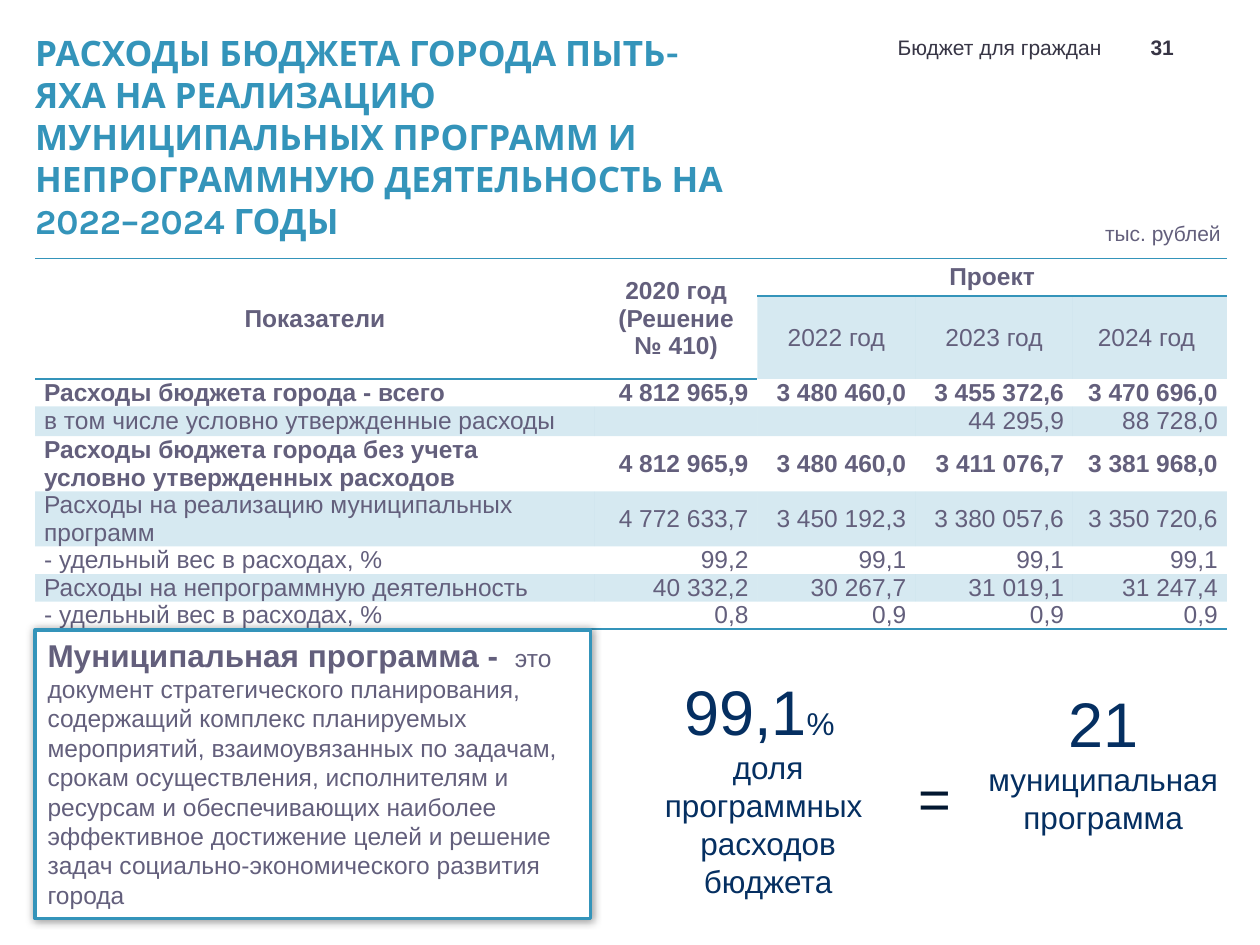
from dataclasses import dataclass
from typing import Optional

from lxml import etree
from pptx import Presentation
from pptx.dml.color import RGBColor
from pptx.enum import shapes, text
from pptx.oxml import ns
from pptx.util import Cm, Pt

TEAL = RGBColor(0x34, 0x94, 0xBA)
GREY = RGBColor(0x63, 0x5F, 0x7C)
DARK = RGBColor(0x37, 0x35, 0x45)
NAVY = RGBColor(0x05, 0x2F, 0x61)
INK = RGBColor(0x02, 0x17, 0x30)
WHITE = RGBColor(0xFF, 0xFF, 0xFF)

LEFT, CENTER, RIGHT = text.PP_ALIGN.LEFT, text.PP_ALIGN.CENTER, text.PP_ALIGN.RIGHT
TOP, MIDDLE, BOTTOM = text.MSO_ANCHOR.TOP, text.MSO_ANCHOR.MIDDLE, text.MSO_ANCHOR.BOTTOM
PLAIN_TABLE = "{2D5ABB26-0587-4C30-8999-92F81FD0307C}"


@dataclass
class Run:
    text: str
    size: float
    color: RGBColor
    bold: bool = False
    font: str = "Arial"


@dataclass
class Label:
    box: tuple  # left, top, width, height in cm
    paragraphs: list
    align: text.PP_ALIGN = CENTER
    anchor: text.MSO_ANCHOR = TOP
    grow: bool = False
    side_inset: float = 0.25


@dataclass
class Row:
    name: str
    values: tuple
    height: float = 0.53
    bold: bool = False
    tinted: bool = False


def add_xml(parent, tag: str, index: Optional[int] = None, **attrs):
    node = etree.Element(ns.qn(tag), {k: str(v) for k, v in attrs.items()})
    parent.insert(len(parent) if index is None else index, node)
    return node


def add_runs(p, runs: list, align) -> None:
    p.alignment = align
    for run in runs:
        r = p.add_run()
        r.text = run.text
        r.font.size, r.font.bold, r.font.name = Pt(run.size), run.bold, run.font
        r.font.color.rgb = run.color


def fill_frame(tf, label: Label) -> None:
    tf.word_wrap = True
    tf.vertical_anchor = label.anchor
    tf.margin_left = tf.margin_right = Cm(label.side_inset)
    tf.auto_size = (text.MSO_AUTO_SIZE.SHAPE_TO_FIT_TEXT if label.grow
                    else text.MSO_AUTO_SIZE.NONE)
    for i, runs in enumerate(label.paragraphs):
        p = tf.add_paragraph() if i else tf.paragraphs[0]
        add_runs(p, runs, label.align)


def add_label(s, label: Label) -> None:
    sp = s.shapes.add_textbox(*map(Cm, label.box))
    fill_frame(sp.text_frame, label)


def add_panel(s, label: Label) -> None:
    sp = s.shapes.add_shape(shapes.MSO_SHAPE.RECTANGLE, *map(Cm, label.box))
    sp.fill.solid()
    sp.fill.fore_color.rgb = WHITE
    sp.line.color.rgb, sp.line.width = TEAL, Pt(2)
    sp.shadow.inherit = False
    effects = sp._element.spPr.find(ns.qn("a:effectLst"))
    shadow = add_xml(effects, "a:outerShdw", blurRad=Pt(5), dist=0, dir=0, rotWithShape=0)
    add_xml(add_xml(shadow, "a:srgbClr", val="000000"), "a:alpha", val=40000)
    fill_frame(sp.text_frame, label)


def style_cell(cell, value: str = "", align=LEFT, bold: bool = False,
               tinted: bool = False, borders: tuple = ()) -> None:
    cell.vertical_anchor = MIDDLE
    cell.margin_left = cell.margin_right = Cm(0.18)
    cell.margin_top = cell.margin_bottom = 0
    p = cell.text_frame.paragraphs[0]
    if value:
        add_runs(p, [Run(value, 14, GREY, bold)], align)
    else:
        add_xml(p._p, "a:endParaRPr", sz=1400)
    if tinted:
        cell.fill.solid()
        cell.fill.fore_color.rgb = TEAL
    else:
        cell.fill.background()
    tc_pr = cell._tc.get_or_add_tcPr()
    for color in tc_pr.iter(ns.qn("a:srgbClr")):
        add_xml(color, "a:alpha", val=20000)
    for i, edge in enumerate(borders):
        line = add_xml(tc_pr, f"a:{edge}", i, w=Pt(1))
        add_xml(add_xml(line, "a:solidFill"), "a:srgbClr", val=TEAL)


def add_budget_table(s, box: tuple, widths: tuple, rows: list) -> None:
    heads = (0.76, 0.84)
    frame = s.shapes.add_table(len(rows) + 2, len(widths), *map(Cm, box))
    table = frame.table
    table.first_row = table.horz_banding = False
    table._tbl.tblPr.find(ns.qn("a:tableStyleId")).text = PLAIN_TABLE
    for column, width in zip(table.columns, widths):
        column.width = Cm(width)
    for line, height in zip(table.rows, (*heads, *(row.height for row in rows))):
        line.height = Cm(height)

    # Two-level header
    top = ("Показатели", "2020 год (Решение № 410)", "Проект", "", "")
    years = ("", "", "2022 год", "2023 год", "2024 год ")
    for c, (title, year) in enumerate(zip(top, years)):
        style_cell(table.cell(0, c), title, CENTER, True, borders=("lnT", "lnB"))
        style_cell(table.cell(1, c), year, CENTER, tinted=bool(year),
                   borders=() if year else ("lnB",))
    for c in (0, 1):
        table.cell(0, c).merge(table.cell(1, c))
    table.cell(0, 2).merge(table.cell(0, 4))

    # Figures
    for n, row in enumerate(rows, start=2):
        borders = ("lnB",) if row is rows[-1] else ()
        for c, value in enumerate((row.name, *row.values)):
            style_cell(table.cell(n, c), value, RIGHT if c else LEFT,
                       row.bold, row.tinted, borders)


ROWS = [
    Row("Расходы бюджета города - всего",
        ("4 812 965,9", "3 480 460,0", "3 455 372,6", "3 470 696,0"), bold=True),
    Row("в том числе условно утвержденные расходы",
        ("", "", "44 295,9", "88 728,0"), tinted=True),
    Row("Расходы бюджета города без учета условно утвержденных расходов",
        ("4 812 965,9", "3 480 460,0", "3 411 076,7", "3 381 968,0"), 1.07, bold=True),
    Row("Расходы на реализацию муниципальных программ",
        ("4 772 633,7", "3 450 192,3", "3 380 057,6", "3 350 720,6"), 1.07, tinted=True),
    Row("- удельный вес в расходах, %", ("99,2", "99,1", "99,1", "99,1")),
    Row("Расходы на непрограммную деятельность",
        ("40 332,2", "30 267,7", "31 019,1", "31 247,4"), tinted=True),
    Row("- удельный вес в расходах, %", ("0,8", "0,9", "0,9", "0,9")),
]

HEADINGS = [
    Label((22.73, 0.48, 1.4, 0.84), [[Run("31", 12, DARK, True)]], anchor=BOTTOM),
    Label((0.71, 0.51, 14, 2.01),
          [[Run("РАСХОДЫ БЮДЖЕТА ГОРОДА ПЫТЬ-ЯХА НА РЕАЛИЗАЦИЮ МУНИЦИПАЛЬНЫХ ПРОГРАММ "
                "И НЕПРОГРАММНУЮ ДЕЯТЕЛЬНОСТЬ НА 2022–2024 ГОДЫ", 20, TEAL, True, "Karla")]],
          LEFT, side_inset=0),
]

DEFINITION = Label((0.71, 12.7, 11.2, 5.82), [[
    Run("Муниципальная программа - ", 18, GREY, True),
    Run(" ", 16, GREY),
    Run("это документ стратегического планирования, содержащий комплекс планируемых "
        "мероприятий, взаимоувязанных по задачам, срокам осуществления, исполнителям и "
        "ресурсам и обеспечивающих наиболее эффективное достижение целей и решение задач "
        "социально-экономического развития города", 14, GREY)]], LEFT, grow=True)

NOTES = [
    Label((12.5, 13.44, 5.97, 4.88),
          [[Run("99,1", 36, NAVY), Run("%", 18, NAVY), Run(" ", 36, NAVY)],
           [Run("доля программных ", 18, NAVY)],
           [Run("расходов бюджета", 18, NAVY)]], grow=True),
    Label((18.26, 15.27, 1.09, 1.22), [[Run("=", 32, INK)]], LEFT),
    Label((19.56, 13.67, 5.36, 3.33),
          [[Run("21", 36, NAVY), Run(" муниципальная программа", 18, NAVY)]], grow=True),
    Label((21.49, 4.32, 3.91, 0.76), [[Run("тыс. рублей", 12, GREY)]], grow=True),
    Label((16.31, 0.48, 6.15, 0.84), [[Run("Бюджет для граждан", 12, DARK)]], RIGHT, BOTTOM),
]


def main() -> None:
    prs = Presentation()
    prs.slide_width, prs.slide_height = Cm(25.4), Cm(19.05)
    s = prs.slides.add_slide(prs.slide_layouts[6])
    for label in HEADINGS:
        add_label(s, label)
    add_budget_table(s, (0.71, 5.21, 24, 7.11), (11.28, 3.28, 3.18, 3.18, 3.1), ROWS)
    add_panel(s, DEFINITION)
    for label in NOTES:
        add_label(s, label)
    prs.save("out.pptx")


if __name__ == "__main__":
    main()
